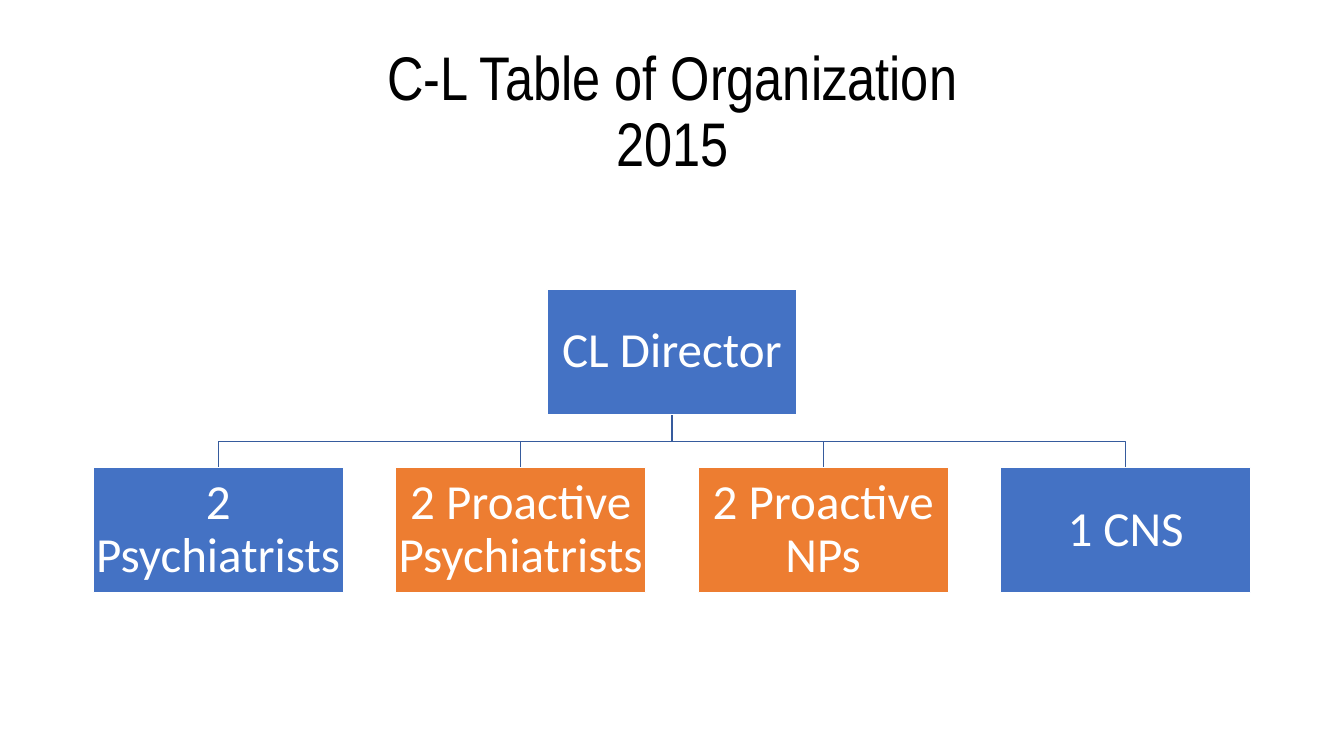
from pptx import Presentation
from pptx.dml.color import RGBColor
from pptx.enum.shapes import MSO_SHAPE
from pptx.enum.text import MSO_ANCHOR, PP_ALIGN
from pptx.util import Inches, Pt

RECTANGLE = MSO_SHAPE.RECTANGLE
MIDDLE = MSO_ANCHOR.MIDDLE
CENTERED = PP_ALIGN.CENTER

BLACK = RGBColor(0x00, 0x00, 0x00)
WHITE = RGBColor(0xFF, 0xFF, 0xFF)
BLUE = RGBColor(0x44, 0x72, 0xC4)
ORANGE = RGBColor(0xED, 0x7D, 0x31)
LINE_BLUE = RGBColor(0x36, 0x5B, 0x9D)

SLIDE_WIDTH, SLIDE_HEIGHT = 13.33, 7.5
CENTER = SLIDE_WIDTH / 2
BOX_WIDTH, BOX_HEIGHT = 2.48, 1.24
BOX_PITCH = 3.0
DIRECTOR_TOP, TEAM_TOP = 2.87, 4.64
DIRECTOR_BOTTOM = 4.12

TEAMS = [
    ("2 Psychiatrists", BLUE),
    ("2 Proactive Psychiatrists", ORANGE),
    ("2 Proactive NPs", ORANGE),
    ("1 CNS", BLUE),
]


class OrganizationSlide:
    """Holds the slide and the style of its elements."""

    title_font, title_size = "Arial Narrow", 44
    box_font, box_size = "Calibri", 35
    box_margin = 0.02
    line_width = Pt(1)

    def __init__(self, presentation):
        self.slide = presentation.slides.add_slide(presentation.slide_layouts[6])

    def add_text(self, shape, lines, font, size, color):
        frame = shape.text_frame
        frame.word_wrap = True
        frame.vertical_anchor = MIDDLE
        paragraph = frame.paragraphs[0]
        paragraph.alignment = CENTERED
        paragraph.line_spacing = 0.9
        for index, line in enumerate(lines):
            if index:
                paragraph.add_line_break()
            run = paragraph.add_run()
            run.text = line
            run.font.name = font
            run.font.size = Pt(size)
            run.font.color.rgb = color

    def title(self, lines, left, top, width, height):
        shape = self.slide.shapes.add_textbox(
            Inches(left), Inches(top), Inches(width), Inches(height))
        self.add_text(shape, lines, self.title_font, self.title_size, BLACK)

    def box(self, text, center, top, color):
        shape = self.slide.shapes.add_shape(
            RECTANGLE, Inches(center - BOX_WIDTH / 2), Inches(top),
            Inches(BOX_WIDTH), Inches(BOX_HEIGHT))
        shape.shadow.inherit = False
        shape.fill.solid()
        shape.fill.fore_color.rgb = color
        shape.line.color.rgb = WHITE
        shape.line.width = self.line_width
        frame = shape.text_frame
        frame.margin_left = frame.margin_right = Inches(self.box_margin)
        frame.margin_top = frame.margin_bottom = Inches(self.box_margin)
        self.add_text(shape, [text], self.box_font, self.box_size, WHITE)

    def branch(self, start, end, top, bottom):
        middle = (top + bottom) / 2
        points = [(start, middle), (end, middle), (end, bottom)]
        builder = self.slide.shapes.build_freeform(Inches(start), Inches(top))
        builder.add_line_segments(
            [(Inches(x), Inches(y)) for x, y in points], close=False)
        shape = builder.convert_to_shape()
        shape.shadow.inherit = False
        shape.fill.background()
        shape.line.color.rgb = LINE_BLUE
        shape.line.width = self.line_width


def main():
    presentation = Presentation()
    presentation.slide_width = Inches(SLIDE_WIDTH)
    presentation.slide_height = Inches(SLIDE_HEIGHT)
    chart = OrganizationSlide(presentation)

    # Title
    chart.title(["C-L Table of Organization", "2015"], 0.92, 0.4, 11.5, 1.45)

    # Branches from the director to each team
    first_center = CENTER - BOX_PITCH * (len(TEAMS) - 1) / 2
    team_centers = [first_center + BOX_PITCH * i for i in range(len(TEAMS))]
    for center in reversed(team_centers):
        chart.branch(CENTER, center, DIRECTOR_BOTTOM, TEAM_TOP)

    # Director and teams
    chart.box("CL Director", CENTER, DIRECTOR_TOP, BLUE)
    for center, (text, color) in zip(team_centers, TEAMS):
        chart.box(text, center, TEAM_TOP, color)

    presentation.save("out.pptx")


if __name__ == "__main__":
    main()
